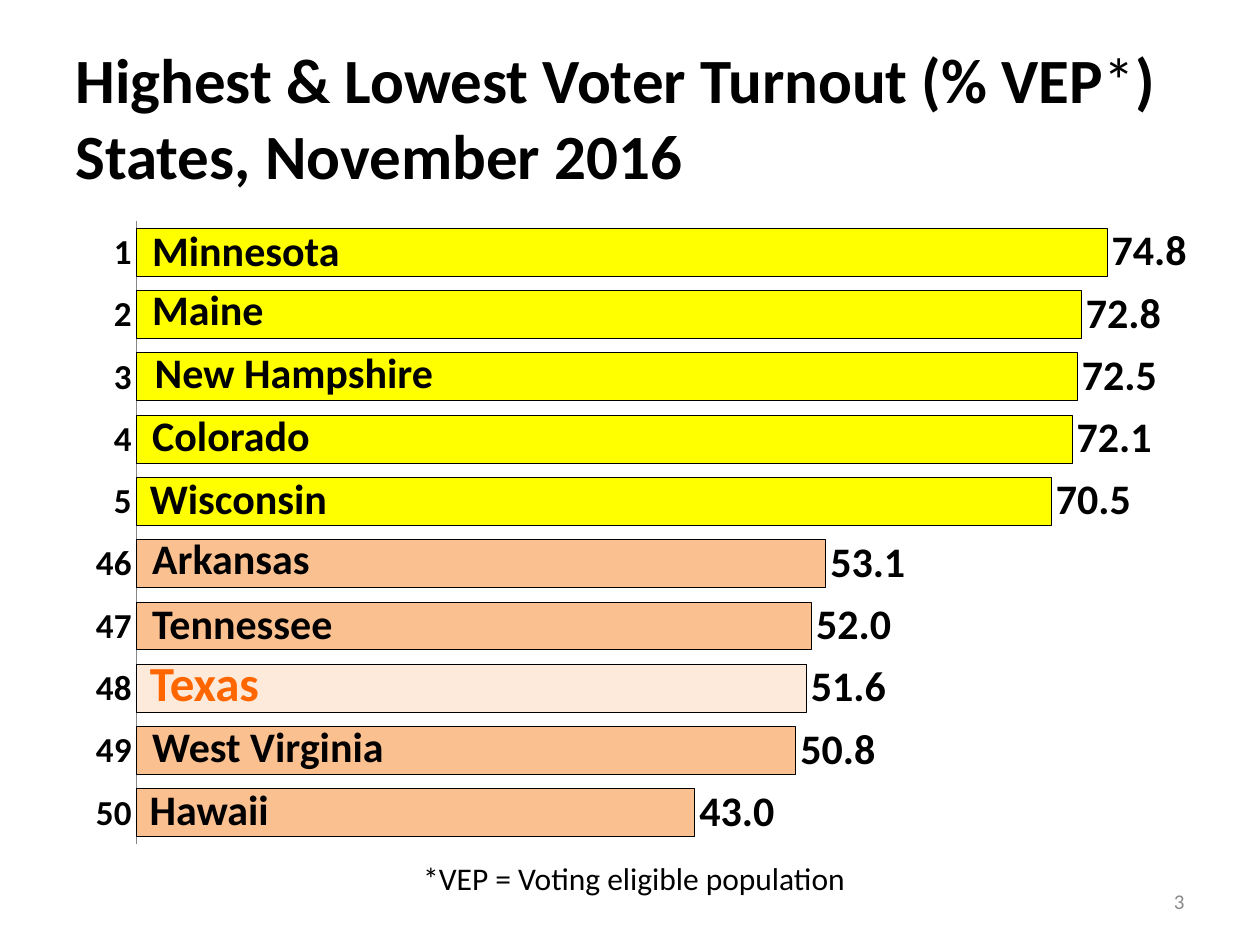
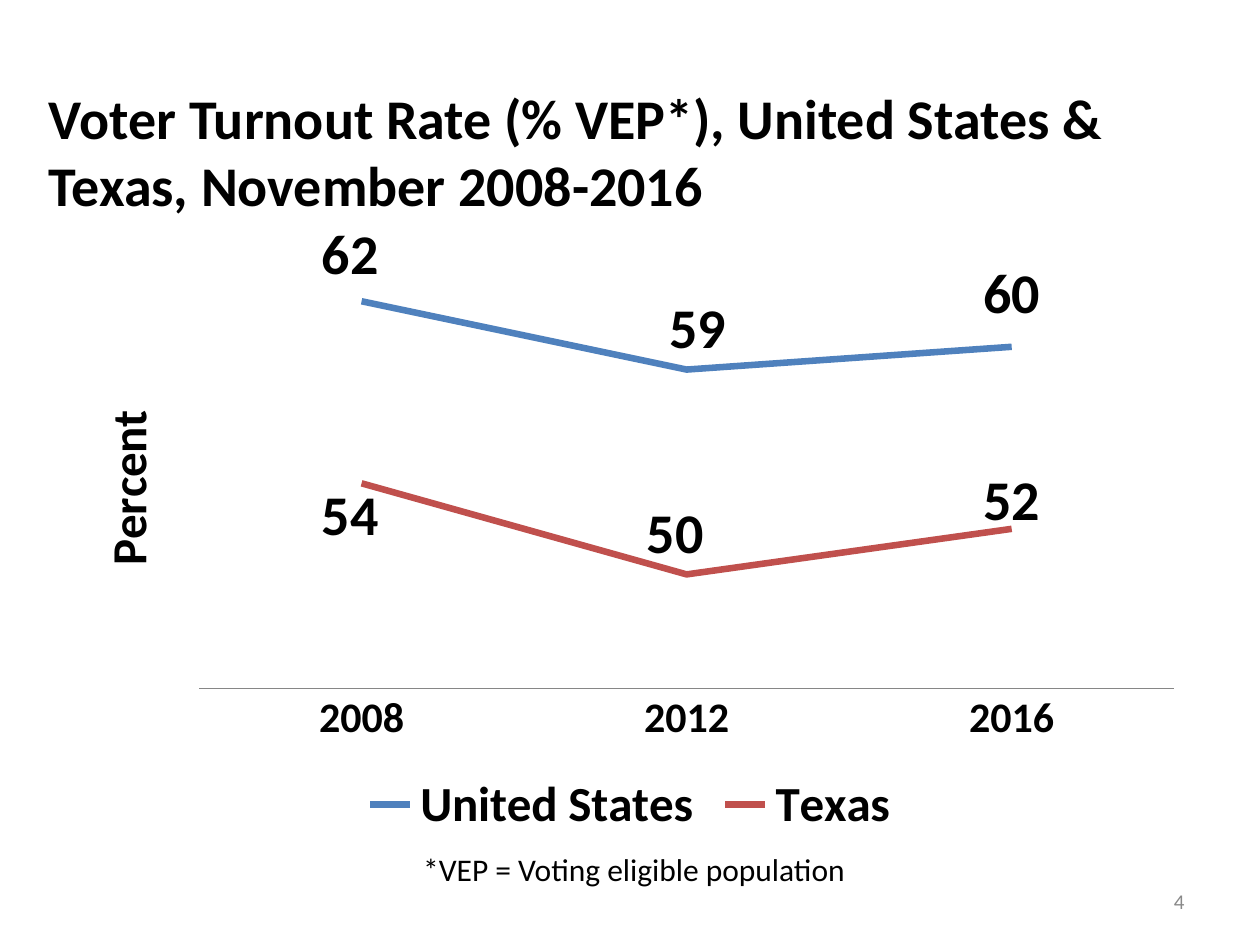
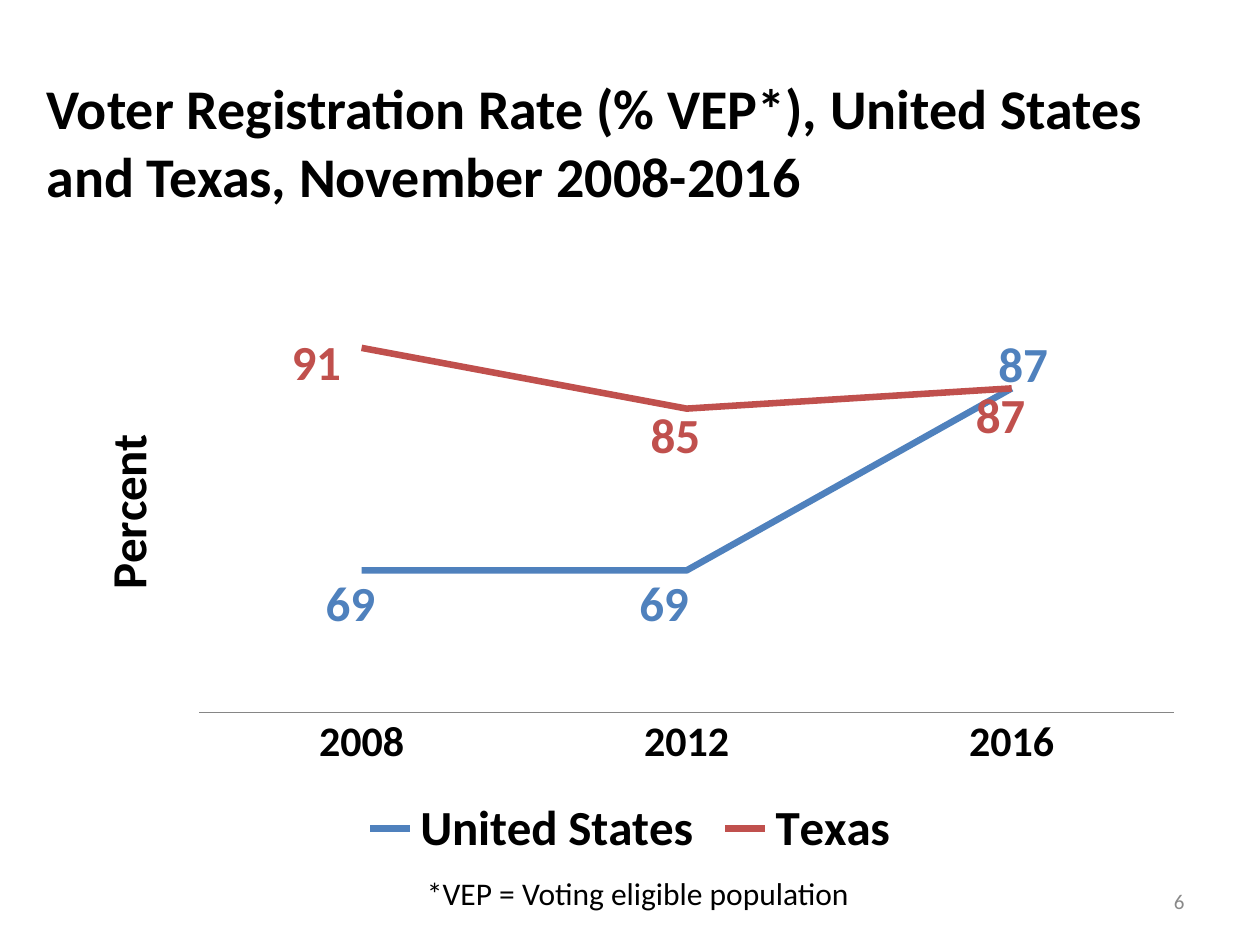
from dataclasses import dataclass

from lxml import etree
from pptx import Presentation
from pptx import util as u
from pptx.chart.data import CategoryChartData
from pptx.dml.color import RGBColor
from pptx.enum import chart as kinds
from pptx.enum import text
from pptx.oxml import ns

FONT = "Calibri"
COLORS = {
    "text": "000000",
    "number": "898989",
    "axis": "868686",
    "high": "FFFF00",
    "low": "FAC090",
    "texas_bar": "FDEADA",
    "texas_label": "FF6600",
    "United States": "4F81BD",
    "Texas": "C0504D",
}
NOTE = "*VEP = Voting eligible population"
YEARS = ("2008", "2012", "2016")
ABOVE = kinds.XL_LABEL_POSITION.ABOVE
BELOW = kinds.XL_LABEL_POSITION.BELOW


@dataclass(frozen=True)
class State:
    rank: int
    name: str
    turnout: float
    fill: str
    left: float
    top: float
    width: float
    size: int = 24
    color: str = "text"


@dataclass(frozen=True)
class Label:
    side: kinds.XL_LABEL_POSITION
    dx: float = 0
    dy: float = 0


@dataclass(frozen=True)
class Trend:
    name: str
    values: tuple[int, ...]
    labels: tuple[Label, ...]


@dataclass(frozen=True)
class TrendPage:
    title: str
    title_at: tuple[float, ...]
    chart_top: float
    low: int
    high: int
    label_size: int
    colored_labels: bool
    note_at: tuple[float, float]
    number: int
    trends: tuple[Trend, ...]


STATES = (
    State(1, "Minnesota", 74.8, "high", 1.11, 1.73, 1.71),
    State(2, "Maine", 72.8, "high", 1.11, 2.2, 1.1),
    State(3, "New Hampshire", 72.5, "high", 1.13, 2.7, 2.44),
    State(4, "Colorado", 72.1, "high", 1.11, 3.2, 1.47),
    State(5, "Wisconsin", 70.5, "high", 1.09, 3.7, 1.62),
    State(46, "Arkansas", 53.1, "low", 1.11, 4.18, 1.47),
    State(47, "Tennessee", 52, "low", 1.11, 4.69, 1.68),
    State(48, "Texas", 51.6, "texas_bar", 1.09, 5.13, 1.12, 28, "texas_label"),
    State(49, "West Virginia", 50.8, "low", 1.11, 5.67, 2.08),
    State(50, "Hawaii", 43, "low", 1.09, 6.17, 1.16),
)
TREND_PAGES = (
    TrendPage(
        "Voter Turnout Rate (% VEP*), United States & Texas, November 2008-2016",
        (0.29, 0.57, 9.5, 1.25), 1.75, 45, 65, 32, False, (3.26, 6.7), 4,
        (
            Trend("United States", (62, 59, 60),
                  (Label(ABOVE, -0.01, -0.01), Label(ABOVE, 0.01), Label(ABOVE, 0, -0.02))),
            Trend("Texas", (54, 50, 52),
                  (Label(BELOW, -0.01, -0.01), Label(ABOVE, -0.01), Label(ABOVE, 0, 0.02))),
        ),
    ),
    TrendPage(
        "Voter Registration Rate (% VEP*), United States and Texas, November 2008-2016",
        (0.27, 0.3, 9.41, 1.64), 1.94, 55, 100, 28, True, (3.29, 6.89), 6,
        (
            Trend("United States", (69, 69, 87),
                  (Label(BELOW, -0.01), Label(BELOW, -0.02), Label(ABOVE, 0.01, 0.02))),
            Trend("Texas", (91, 85, 87),
                  (Label(BELOW, -0.04, -0.03), Label(BELOW, -0.01, -0.01), Label(BELOW, -0.01, -0.01))),
        ),
    ),
)


def rgb(name: str) -> RGBColor:
    return RGBColor.from_string(COLORS[name])


def style_font(font, size: float, color: str = "text", bold: bool = False) -> None:
    font.name = FONT
    font.size = u.Pt(size)
    font.bold = bold
    font.color.rgb = rgb(color)


def add_text(page, words: str | tuple, at: tuple[float, ...], *, size: float,
             color: str = "text", bold: bool = False, wrap: bool = True,
             align=text.PP_ALIGN.LEFT, anchor=text.MSO_ANCHOR.TOP) -> None:
    box = page.shapes.add_textbox(*map(u.Inches, at))
    frame = box.text_frame
    frame.word_wrap = wrap
    frame.vertical_anchor = anchor
    if not wrap:
        frame.auto_size = text.MSO_AUTO_SIZE.SHAPE_TO_FIT_TEXT
    para = frame.paragraphs[0]
    para.alignment = align
    for words_part, heavy in ([(words, bold)] if isinstance(words, str) else words):
        span = para.add_run()
        span.text = words_part
        style_font(span.font, size, color, heavy)


def add_frame(page, title: str | tuple, title_at: tuple[float, ...], title_size: int,
              note_at: tuple[float, float], number: int) -> None:
    add_text(page, title, title_at, size=title_size, bold=True, anchor=text.MSO_ANCHOR.MIDDLE)
    add_text(page, NOTE, (*note_at, 3.6, 0.4), size=18, wrap=False)
    add_text(page, str(number), (7.17, 6.95, 2.33, 0.4), size=12, color="number",
             align=text.PP_ALIGN.RIGHT, anchor=text.MSO_ANCHOR.MIDDLE)


def place(element, index: int, **values: str | float) -> None:
    for old in element.findall(ns.qn("c:layout")):
        element.remove(old)
    layout = etree.Element(ns.qn("c:layout"))
    manual = etree.SubElement(layout, ns.qn("c:manualLayout"))
    for tag, value in values.items():
        etree.SubElement(manual, ns.qn(f"c:{tag}")).set("val", str(value))
    element.insert(index, layout)


def place_plot(chart, x: float, y: float, w: float, h: float) -> None:
    place(chart.element.xpath(".//c:plotArea")[0], 0, layoutTarget="inner",
          xMode="edge", yMode="edge", x=x, y=y, w=w, h=h)


def add_chart(page, kind, data: CategoryChartData, top: float, category_size: int,
              number_format: str):
    area = map(u.Inches, (0.5, top, 9, 4.95))
    chart = page.shapes.add_chart(kind, *area, data).chart
    chart.has_title = False
    chart.has_legend = False
    style_font(chart.font, 18)
    chart.plots[0].vary_by_categories = False
    categories = chart.category_axis
    categories.has_major_gridlines = False
    categories.major_tick_mark = kinds.XL_TICK_MARK.NONE
    categories.format.line.color.rgb = rgb("axis")
    categories.format.line.width = u.Pt(0.5)
    style_font(categories.tick_labels.font, category_size, bold=True)
    values = chart.value_axis
    values.has_major_gridlines = False
    values.tick_labels.number_format = number_format
    values.tick_labels.number_format_is_linked = False
    values.visible = False
    return chart


def style_labels(series, number_format: str, size: int, color: str = "text") -> None:
    labels = series.data_labels
    labels.show_value = True
    labels.number_format = number_format
    labels.number_format_is_linked = False
    style_font(labels.font, size, color, True)


def add_state_page(page) -> None:
    ranking = STATES[::-1]
    data = CategoryChartData()
    data.categories = [str(state.rank) for state in ranking]
    data.add_series("Series 1", [state.turnout for state in ranking])
    chart = add_chart(page, kinds.XL_CHART_TYPE.BAR_CLUSTERED, data, 1.75, 20, "0.0")
    place_plot(chart, 0.065, 0, 0.915, 1)
    chart.plots[0].gap_width = 30
    series = chart.plots[0].series[0]
    series.format.line.color.rgb = rgb("text")
    series.format.line.width = u.Pt(0.25)
    for index, state in enumerate(ranking):
        bar = series.points[index].format
        bar.fill.solid()
        bar.fill.fore_color.rgb = rgb(state.fill)
        bar.line.color.rgb = rgb("text")
        bar.line.width = u.Pt(0.25)
    style_labels(series, "0.0", 24)
    for state in STATES:
        height = 0.57 if state.size > 24 else 0.5
        add_text(page, state.name, (state.left, state.top, state.width, height),
                 size=state.size, color=state.color, bold=True, wrap=False)
    title = (("Highest & Lowest Voter Turnout (% VEP", True), ("*", False),
             (") States, November 2016", True))
    add_frame(page, title, (0.5, 0.3, 9, 1.25), 36, (3.26, 6.77), 3)


def add_percent_title(chart) -> None:
    frame = chart.value_axis.axis_title.text_frame
    frame.text = "Percent"
    style_font(frame.paragraphs[0].runs[0].font, 28, bold=True)
    title = chart.element.xpath(".//c:valAx/c:title")[0]
    title.xpath(".//a:bodyPr")[0].set("rot", "-5400000")
    place(title, 1, xMode="edge", yMode="edge", x=0.02, y=0.29)


def add_point_label(point, label: Label, size: int, color: str) -> None:
    data_label = point.data_label
    style_font(data_label.font, size, color, True)
    data_label.position = label.side


def add_trend_page(page, content: TrendPage) -> None:
    data = CategoryChartData()
    data.categories = YEARS
    for trend in content.trends:
        data.add_series(trend.name, trend.values)
    chart = add_chart(page, kinds.XL_CHART_TYPE.LINE, data, content.chart_top, 24, "0")
    place_plot(chart, 0.12, 0.02, 0.86, 0.73)
    axis = chart.value_axis
    axis.minimum_scale = content.low
    axis.maximum_scale = content.high
    axis.major_unit = 10
    add_percent_title(chart)
    chart.has_legend = True
    chart.legend.position = kinds.XL_LEGEND_POSITION.BOTTOM
    chart.legend.include_in_layout = False
    style_font(chart.legend.font, 28, bold=True)
    for series, trend in zip(chart.plots[0].series, content.trends):
        series.smooth = False
        series.marker.style = kinds.XL_MARKER_STYLE.NONE
        series.format.line.color.rgb = rgb(trend.name)
        series.format.line.width = u.Pt(3.75)
        color = trend.name if content.colored_labels else "text"
        style_labels(series, "0", content.label_size, color)
        for index, label in enumerate(trend.labels):
            add_point_label(series.points[index], label, content.label_size, color)
    drawn = [label for trend in content.trends for label in trend.labels]
    for element, label in zip(chart.element.xpath(".//c:dLbl"), drawn):
        place(element, 1, x=label.dx, y=label.dy)
        number = etree.Element(ns.qn("c:numFmt"), formatCode="0", sourceLinked="0")
        element.insert(2, number)
    for leader in chart.element.xpath(".//c:showLeaderLines"):
        leader.set("val", "0")
    add_frame(page, content.title, content.title_at, 32, content.note_at, content.number)


def main() -> None:
    deck = Presentation()
    deck.slide_width = u.Inches(10)
    deck.slide_height = u.Inches(7.5)
    blank = deck.slide_layouts[6]
    add_state_page(deck.slides.add_slide(blank))
    for content in TREND_PAGES:
        add_trend_page(deck.slides.add_slide(blank), content)
    deck.save("out.pptx")


if __name__ == "__main__":
    main()
